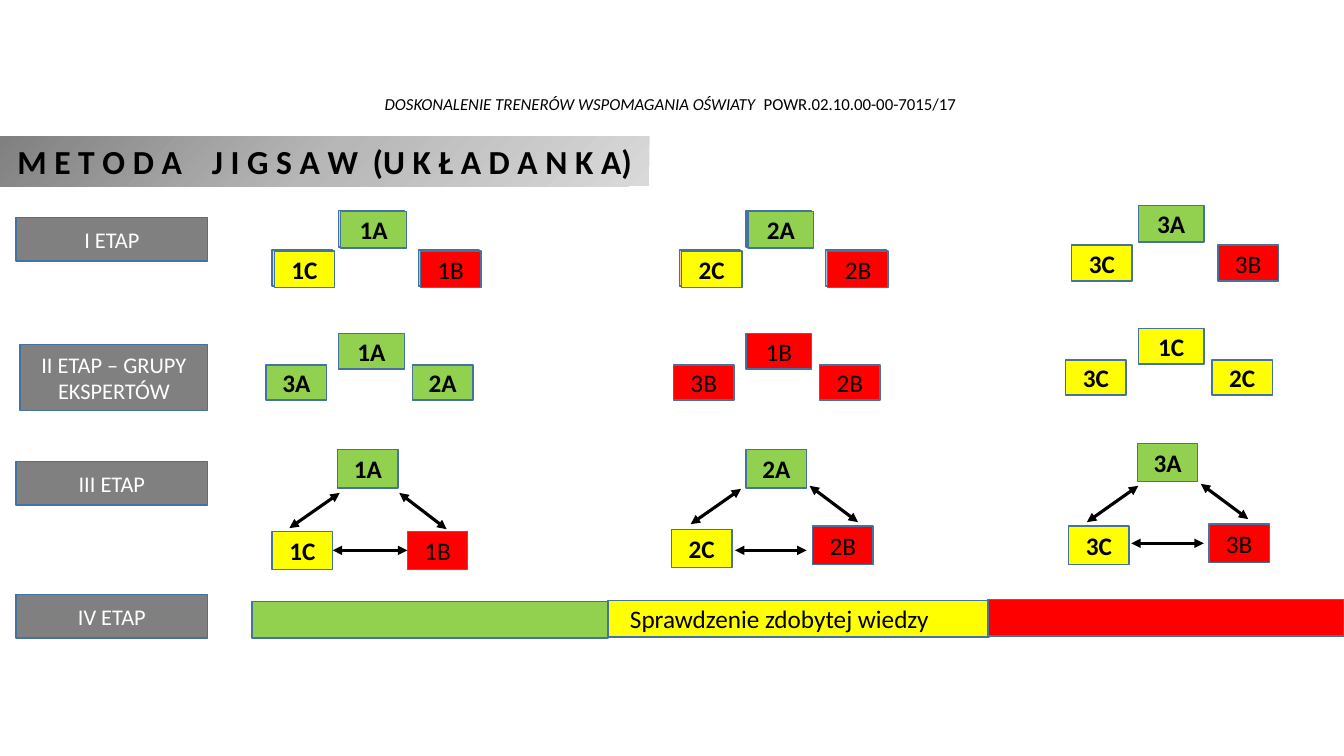
from lxml.etree import SubElement
from pptx import Presentation
from pptx.dml.color import RGBColor
from pptx.enum.shapes import MSO_CONNECTOR, MSO_SHAPE
from pptx.enum.text import MSO_ANCHOR, MSO_AUTO_SIZE, PP_ALIGN
from pptx.oxml import parse_xml
from pptx.oxml.ns import nsdecls, qn
from pptx.util import Inches, Pt

GREEN, RED, YELLOW = "92D050", "FF0000", "FFFF00"
GREY, BLACK, WHITE, BORDER = "808080", "000000", "FFFFFF", "43739E"
LETTER_COLOURS = {"A": GREEN, "B": RED, "C": YELLOW}
BACK_COLOURS = {"A": "C5E0B4", "B": "9DC3E6", "C": "F8CBAD"}


def colour(value):
    return RGBColor.from_string(value)


def grid(*cells):
    return [Inches(cell / 10) for cell in cells]


def apply(target, values):
    for name, value in values.items():
        setattr(target, name, value)


class SlideBuilder:
    font_name = "Calibri"

    def __init__(self, presentation):
        self.slide = presentation.slides.add_slide(presentation.slide_layouts[5])

    def fill_text(self, shape, runs, size, text_colour=BLACK, bold=False,
                  align=PP_ALIGN.CENTER, anchor=MSO_ANCHOR.MIDDLE, wrap=True):
        frame = shape.text_frame
        apply(frame, {"word_wrap": wrap, "auto_size": MSO_AUTO_SIZE.NONE,
                      "vertical_anchor": anchor})
        paragraph = frame.paragraphs[0]
        paragraph.alignment = align
        for text, italic, spacing in runs:
            run = paragraph.add_run()
            run.text = text
            apply(run.font, {"name": self.font_name, "size": Pt(size),
                             "bold": bold, "italic": italic})
            run.font.color.rgb = colour(text_colour)
            if spacing:
                run._r.get_or_add_rPr().set("spc", str(spacing * 100))

    def title(self, cells, runs, size, stops):
        shape = self.slide.shapes.title
        apply(shape, dict(zip(("left", "top", "width", "height"), grid(*cells))))
        stop_xml = "".join(
            f'<a:gs pos="{position * 1000}"><a:srgbClr val="{value}"/></a:gs>'
            for position, value in stops)
        gradient = parse_xml(
            f'<a:gradFill {nsdecls("a")}><a:gsLst>{stop_xml}</a:gsLst>'
            '<a:path path="circle"><a:fillToRect r="100000" b="100000"/></a:path>'
            '</a:gradFill>')
        shape._element.spPr.append(gradient)
        self.fill_text(shape, runs, size, bold=True, wrap=False)

    def text(self, cells, runs, size, **style):
        shape = self.slide.shapes.add_textbox(*grid(*cells))
        self.fill_text(shape, runs, size, **style)

    def box(self, cells, fill, text="", size=18, **style):
        shape = self.slide.shapes.add_shape(MSO_SHAPE.RECTANGLE, *grid(*cells))
        shape.shadow.inherit = False
        shape.fill.solid()
        shape.fill.fore_color.rgb = colour(fill)
        shape.line.color.rgb = colour(BORDER)
        shape.line.width = Pt(1)
        if text:
            self.fill_text(shape, [(text, False, 0)], size, **style)
        return shape

    def member(self, cells, name):
        letter = name[-1]
        return self.box(cells, LETTER_COLOURS[letter], name, bold=letter != "B")

    def arrow(self, start_x, start_y, end_x, end_y):
        connector = self.slide.shapes.add_connector(
            MSO_CONNECTOR.STRAIGHT, *grid(start_x, start_y, end_x, end_y))
        connector.line.color.rgb = colour(BLACK)
        connector.line.width = Pt(2.25)
        line = connector.line._get_or_add_ln()
        for end in ("a:headEnd", "a:tailEnd"):
            SubElement(line, qn(end), type="triangle")
        SubElement(connector._element.spPr, qn("a:effectLst"))
        return connector


def trio_cells(left, top, side_offsets, drop, height):
    before, after = side_offsets
    return [(left + before, top + drop, 6, height),
            (left, top, 6.5, height),
            (left + after, top + drop, 6, height)]


def draw_stage_one(builder):
    for number, left, top in ((1, 33.8, 21), (2, 74.2, 21), (3, 112.9, 20.4)):
        cells = trio_cells(left, top, (-6.6, 7.9), 3.9, 3.6)
        if number < 3:
            for (x, y, width, height), letter in zip(cells, "CAB"):
                builder.box((x - 0.2, y - 0.1, width, height), BACK_COLOURS[letter])
        for place, letter in zip(cells, "CAB"):
            builder.member(place, f"{number}{letter}")


def draw_stage_two(builder):
    groups = (("3A", "1A", "2A"), ("3B", "1B", "2B"), ("3C", "1C", "2C"))
    corners = ((33.6, 33.1), (74, 33.1), (112.9, 32.6))
    for names, (left, top) in zip(groups, corners):
        for place, name in zip(trio_cells(left, top, (-7.2, 7.3), 3.1, 3.5), names):
            builder.member(place, name)


def draw_stage_three(builder):
    corners = (((27, 52.7), (33.5, 44.6), (40.4, 52.7)),
               ((66.6, 52.5), (74, 44.6), (80.6, 52.2)),
               ((106, 52.2), (112.8, 44), (119.9, 52)))
    arrows = (((28.7, 52.4, 33.7, 48.9), (39.6, 48.9, 44.3, 52.5)),
              ((68.5, 52, 73.5, 48.5), (80.3, 48.2, 85.1, 51.8),
               (72.9, 54.6, 80, 54.6)),
              ((107.8, 51.8, 112.9, 48.2), (119.1, 48, 123.8, 51.5),
               (112.2, 53.9, 119.4, 53.9)))
    for number, (places, lines) in enumerate(zip(corners, arrows), 1):
        members = [builder.member((*place, 6, 3.8), f"{number}{letter}")
                   for place, letter in zip(places, "CAB")]
        for line in lines:
            builder.arrow(*line)
        if number == 1:
            joined = builder.arrow(33, 54.6, 40.4, 54.6)
            joined.begin_connect(members[0], 3)
            joined.end_connect(members[2], 1)


def main():
    presentation = Presentation()
    apply(presentation, {"slide_width": Inches(13.33), "slide_height": Inches(7.5)})
    builder = SlideBuilder(presentation)

    builder.title((0, 13.5, 64.4, 5),
                  [("M E T O D A", False, 0), (" ", False, 16),
                   ("J I G S A W", False, 0), (" ", False, 5),
                   ("(U K Ł A D A N K A)", False, 0)],
                  24, ((0, GREY), (50, "B7B7B7"), (100, "D9D9D9")))
    builder.text((9.2, 8.3, 114.6, 4),
                 [("DOSKONALENIE TRENERÓW WSPOMAGANIA OŚWIATY", True, 0),
                  (" ", True, 3), ("POWR.02.10.00-00-7015/17", False, 0)], 12)

    for label, cells in (("I ETAP", (1.6, 21.6, 19, 4.3)),
                         ("II ETAP – GRUPY EKSPERTÓW", (2, 34.2, 18.6, 6.5)),
                         ("III ETAP", (1.6, 45.8, 19, 4.3)),
                         ("IV ETAP", (1.6, 59, 19, 4.3))):
        builder.box(cells, GREY, label, 16, text_colour=WHITE)

    draw_stage_one(builder)
    draw_stage_two(builder)
    draw_stage_three(builder)

    for fill, left, top, width in ((GREEN, 25, 59.7, 35.3),
                                   (YELLOW, 60.3, 59.6, 37.8),
                                   (RED, 98, 59.5, 35.3)):
        builder.box((left, top, width, 3.6), fill)
    builder.text((61.5, 59.4, 35.3, 4), [("Sprawdzenie zdobytej wiedzy", False, 0)],
                 18, align=PP_ALIGN.LEFT, anchor=MSO_ANCHOR.TOP)

    presentation.save("out.pptx")


if __name__ == "__main__":
    main()
